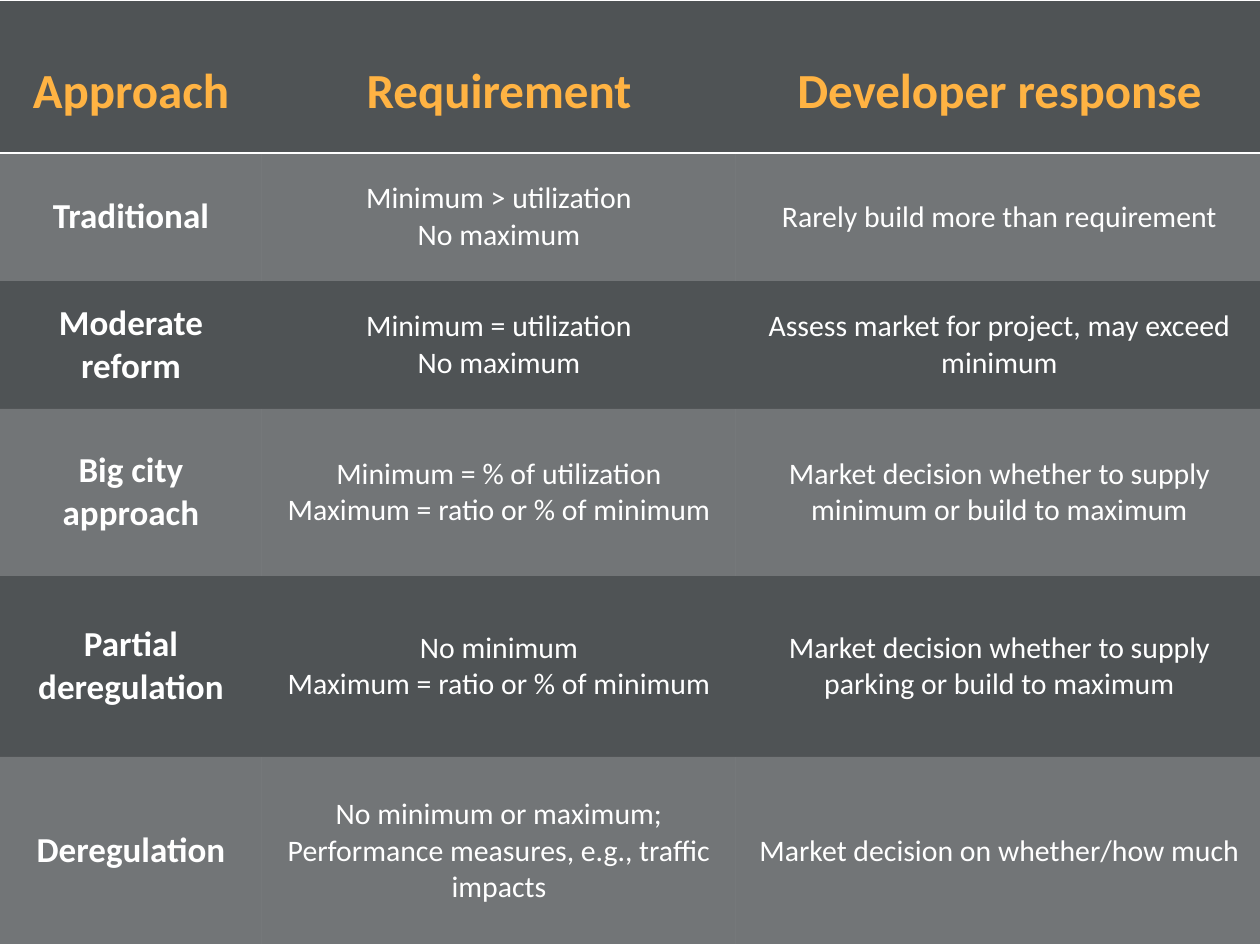
from dataclasses import dataclass

from pptx import Presentation
from pptx.dml.color import RGBColor
from pptx.enum.text import MSO_ANCHOR, PP_ALIGN
from pptx.oxml import parse_xml
from pptx.oxml.ns import nsdecls, qn
from pptx.util import Pt

EMU_PER_PX = 914400 / 126
NO_STYLE_NO_GRID = "{2D5ABB26-0587-4C30-8999-92F81FD0307C}"


@dataclass(frozen=True)
class Theme:
    """Colours and type sizes of the slide."""
    font: str = "Calibri"
    background: str = "4F5355"
    accent: str = "FFB343"
    light: str = "FFFFFF"
    band_alpha: int = 20000
    heading_size: int = 28
    approach_size: int = 20
    detail_size: int = 17
    rule_width: int = 1


THEME = Theme()
SLIDE_SIZE = (1260, 945)
TABLE_BOX = (0, 0, 1263, 945)
COLUMN_WIDTHS = (262, 474, 527)
ROW_HEIGHTS = (153, 128, 128, 167, 181, 188)
HEADINGS = ("Approach", "Requirement", "Developer response")
APPROACHES = (
    ("Traditional", ("Minimum > utilization", "No maximum"),
     "Rarely build more than requirement"),
    ("Moderate reform", ("Minimum = utilization", "No maximum"),
     "Assess market for project, may exceed minimum"),
    ("Big city approach", ("Minimum = % of utilization", "Maximum = ratio or % of minimum"),
     "Market decision whether to supply minimum or build to maximum"),
    ("Partial deregulation", ("No minimum", "Maximum = ratio or % of minimum"),
     "Market decision whether to supply parking or build to maximum"),
    ("Deregulation", ("No minimum or maximum; Performance measures, e.g., traffic impacts",),
     "Market decision on whether/how much"),
)


def px(length):
    """Turn pixels into EMU."""
    return round(length * EMU_PER_PX)


def write_lines(cell, lines, size, color, bold, margins, space_after=0, line_spacing=None):
    """Write centred paragraphs into a cell."""
    cell.vertical_anchor = MSO_ANCHOR.MIDDLE
    cell.margin_left = cell.margin_right = px(margins[0])
    cell.margin_top = cell.margin_bottom = px(margins[1])
    for index, line in enumerate(lines):
        frame = cell.text_frame
        paragraph = frame.add_paragraph() if index else frame.paragraphs[0]
        paragraph.alignment = PP_ALIGN.CENTER
        paragraph.space_after = Pt(space_after)
        if line_spacing:
            paragraph.line_spacing = line_spacing
        run = paragraph.add_run()
        run.text = line
        run.font.name = THEME.font
        run.font.size = Pt(size)
        run.font.bold = bold
        run.font.color.rgb = RGBColor.from_string(color)


def rule_cell(cell, sides):
    """Draw light rules on the given sides of a cell."""
    properties = cell._tc.get_or_add_tcPr()
    for side in sides:
        properties.append(parse_xml(
            f'<a:ln{side} {nsdecls("a")} w="{Pt(THEME.rule_width)}"><a:solidFill>'
            f'<a:srgbClr val="{THEME.light}"/></a:solidFill></a:ln{side}>'))


def fill_cell(cell, banded):
    """Give a cell a translucent band or leave it clear."""
    if not banded:
        cell.fill.background()
        return
    cell.fill.solid()
    cell.fill.fore_color.rgb = RGBColor.from_string(THEME.light)
    tint = cell._tc.tcPr.find(qn("a:solidFill")).find(qn("a:srgbClr"))
    tint.append(parse_xml(f'<a:alpha {nsdecls("a")} val="{THEME.band_alpha}"/>'))


def add_heading_row(table):
    """Fill the row of column headings."""
    for column, heading in enumerate(HEADINGS):
        cell = table.cell(0, column)
        rule_cell(cell, "TB")
        fill_cell(cell, banded=False)
        write_lines(cell, (heading,), THEME.heading_size, THEME.accent, True,
                    margins=(6, 0), space_after=6, line_spacing=1.5)


def add_approach_row(table, row, approach, requirements, response):
    """Fill the row of one parking approach."""
    for column, lines in enumerate(((approach,), requirements, (response,))):
        cell = table.cell(row, column)
        is_name = column == 0
        if row == len(APPROACHES):
            rule_cell(cell, "B")
        fill_cell(cell, banded=row % 2 == 1)
        write_lines(cell, lines, THEME.approach_size if is_name else THEME.detail_size,
                    THEME.light, is_name, margins=(13, 13),
                    space_after=6 if is_name else 0)


def add_approach_table(slide, box):
    """Build the table of approaches inside the box."""
    frame = slide.shapes.add_table(len(ROW_HEIGHTS), len(COLUMN_WIDTHS), *map(px, box))
    table = frame.table
    table.first_row = table.horz_banding = False
    table._tbl.tblPr.find(qn("a:tableStyleId")).text = NO_STYLE_NO_GRID
    for column, width in zip(table.columns, COLUMN_WIDTHS):
        column.width = px(width)
    for row, height in zip(table.rows, ROW_HEIGHTS):
        row.height = px(height)
    add_heading_row(table)
    for row, approach in enumerate(APPROACHES, start=1):
        add_approach_row(table, row, *approach)


def main():
    """Build and save the slide."""
    presentation = Presentation()
    presentation.slide_width, presentation.slide_height = map(px, SLIDE_SIZE)
    slide = presentation.slides.add_slide(presentation.slide_layouts.get_by_name("Blank"))
    slide.background.fill.solid()
    slide.background.fill.fore_color.rgb = RGBColor.from_string(THEME.background)
    add_approach_table(slide, TABLE_BOX)
    presentation.save("out.pptx")


if __name__ == "__main__":
    main()
